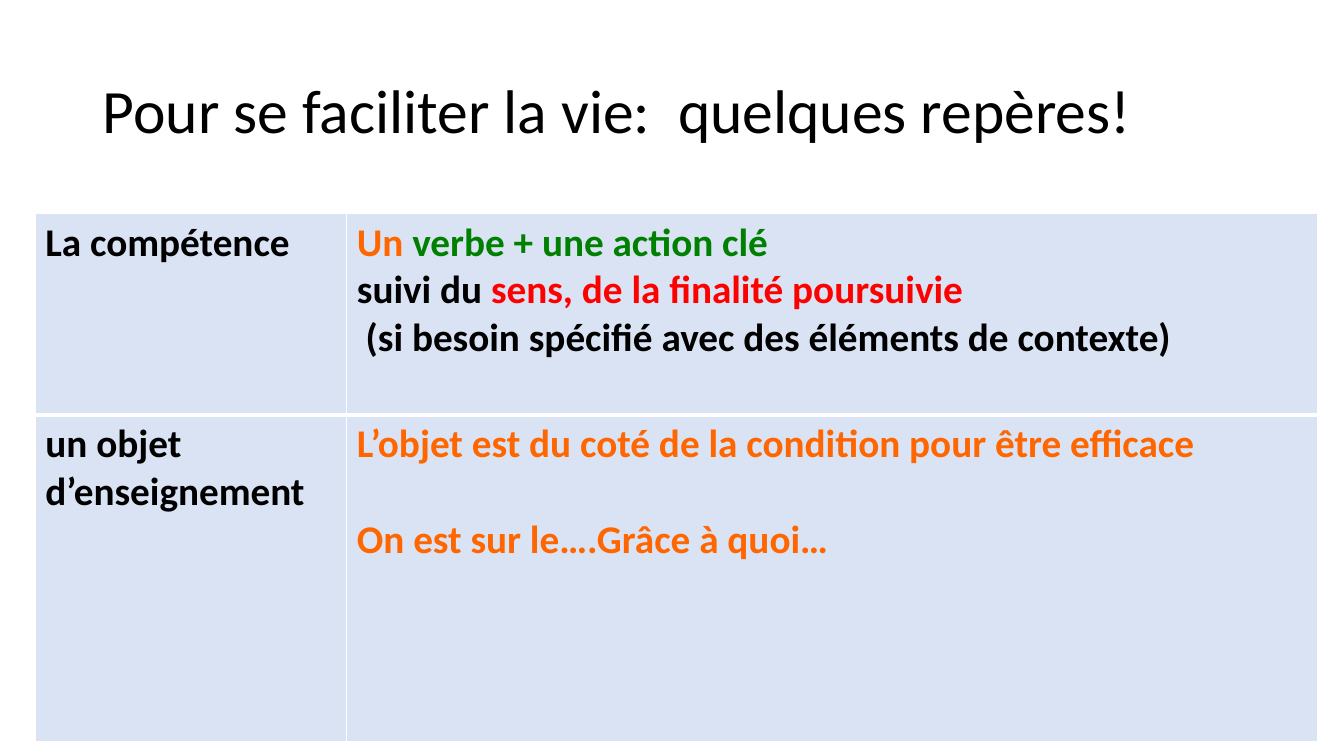
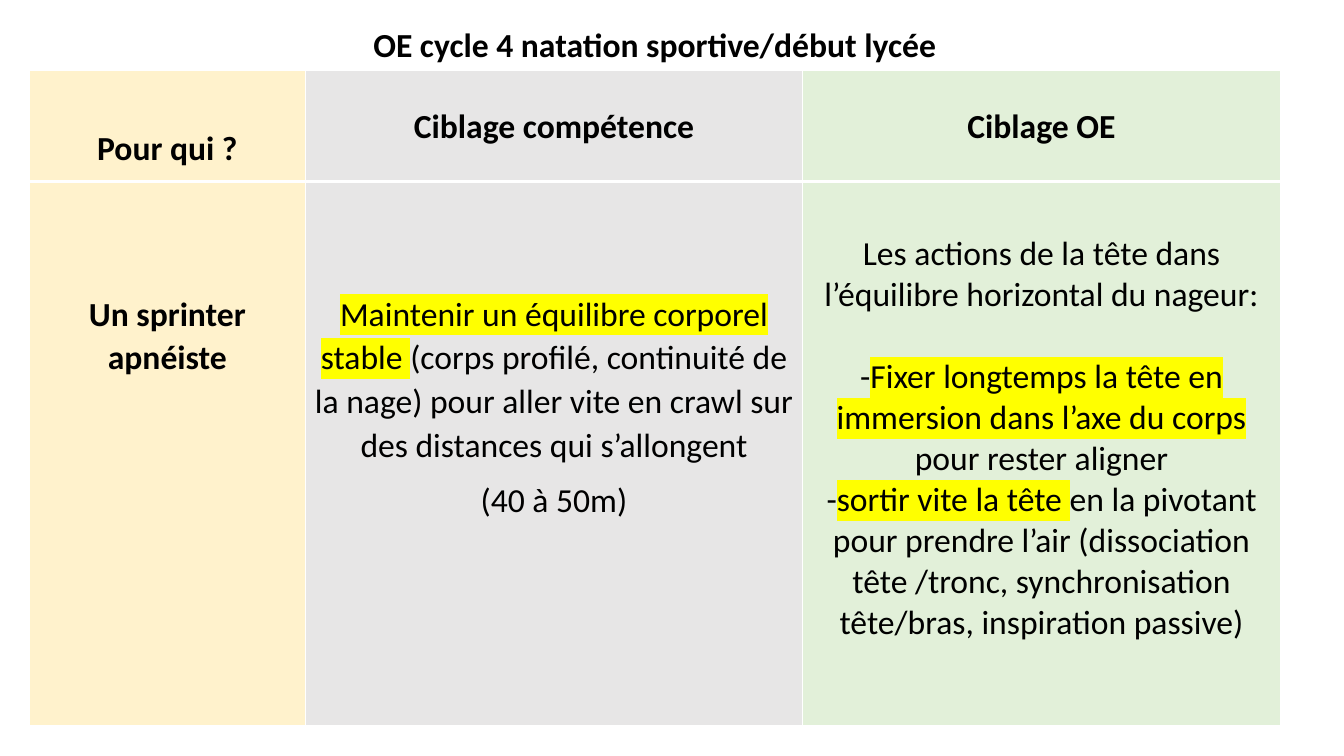
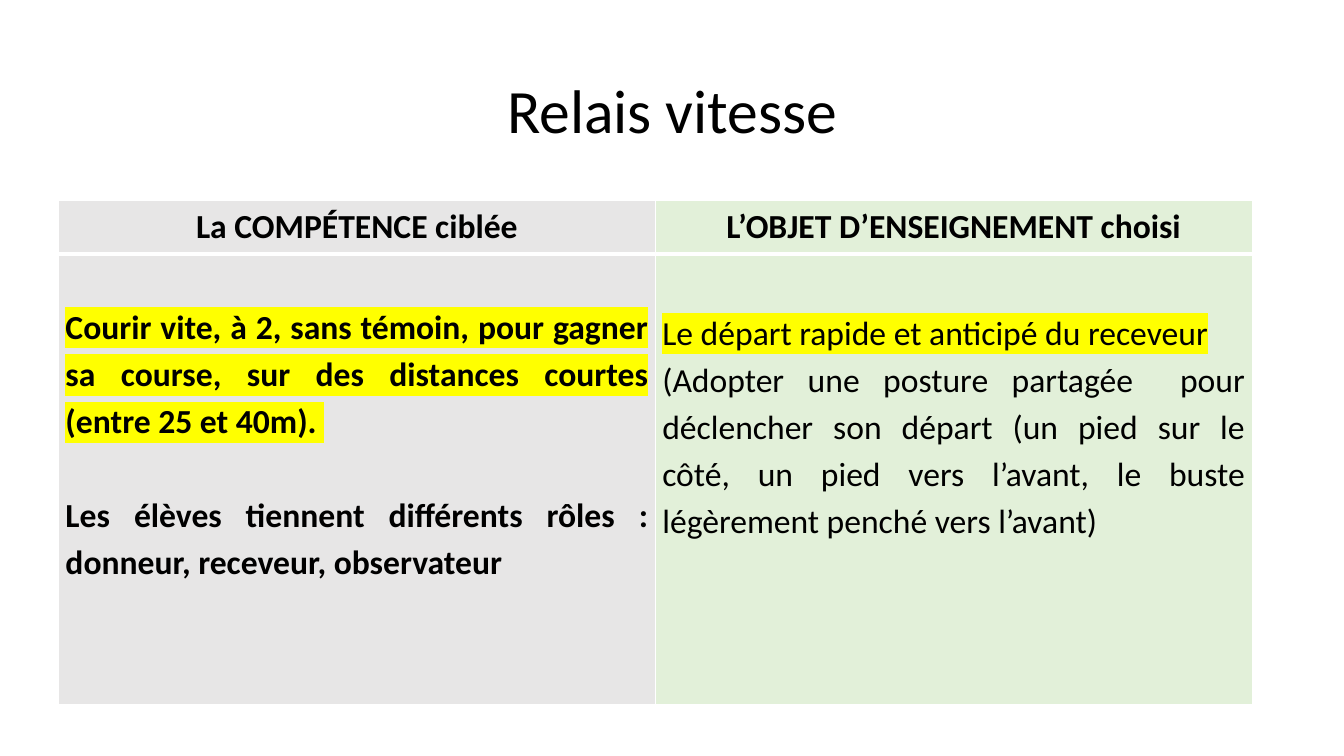
from dataclasses import dataclass, field

from lxml.etree import SubElement
from pptx import Presentation
from pptx.dml.color import RGBColor
from pptx.enum.text import MSO_ANCHOR, MSO_AUTO_SIZE, PP_ALIGN
from pptx.oxml.ns import qn
from pptx.oxml.xmlchemy import OxmlElement
from pptx.util import Inches, Pt

BLACK = RGBColor(0x00, 0x00, 0x00)
WHITE = RGBColor(0xFF, 0xFF, 0xFF)
ORANGE = RGBColor(0xFF, 0x66, 0x00)
GREEN = RGBColor(0x00, 0x80, 0x00)
RED = RGBColor(0xFF, 0x00, 0x00)
YELLOW = RGBColor(0xFF, 0xFF, 0x00)
PALE_BLUE = RGBColor(0xDA, 0xE3, 0xF3)
PALE_YELLOW = RGBColor(0xFF, 0xF2, 0xCC)
PALE_GREY = RGBColor(0xE7, 0xE6, 0xE6)
PALE_GREEN = RGBColor(0xE2, 0xF0, 0xD9)


@dataclass
class Run:
    text: str
    color: RGBColor = BLACK
    highlight: RGBColor = None


@dataclass
class Para:
    runs: list
    fmt: dict = field(default_factory=dict)


@dataclass
class Cell:
    fill: RGBColor
    paras: list
    top: float = 0
    anchor: MSO_ANCHOR = MSO_ANCHOR.TOP
    bold: bool = True


def set_all(target, values):
    for name, value in values.items():
        setattr(target, name, value)


def plain(text, **fmt):
    return Para([Run(text)], fmt)


class Deck:
    font = "Calibri"

    def __init__(self):
        self.prs = Presentation()
        set_all(self.prs, {"slide_width": Inches(13.33), "slide_height": Inches(7.5)})
        self.s = None

    def add_slide(self, layout):
        self.s = self.prs.slides.add_slide(self.prs.slide_layouts.get_by_name(layout))

    def add_run(self, p, run, size, bold):
        r = p.add_run()
        r.text = run.text
        set_all(r.font, {"size": Pt(size), "bold": bold, "name": self.font})
        r.font.color.rgb = run.color
        if run.highlight is not None:
            highlight = OxmlElement("a:highlight")
            SubElement(highlight, qn("a:srgbClr"), val=str(run.highlight))
            r.font._element.find(qn("a:solidFill")).addnext(highlight)

    def add_paras(self, tf, paras, size, bold, fmt):
        for i, para in enumerate(paras):
            p = tf.paragraphs[0] if i == 0 else tf.add_paragraph()
            set_all(p, {**fmt, **para.fmt})
            for run in para.runs:
                self.add_run(p, run, size, bold)

    def title(self, text, alignment):
        self.add_slide("Title Only")
        sp = self.s.shapes.title
        set_all(sp, {"left": Inches(0.92), "top": Inches(0.4),
                     "width": Inches(11.5), "height": Inches(1.45)})
        tf = sp.text_frame
        set_all(tf, {"word_wrap": True, "auto_size": MSO_AUTO_SIZE.NONE,
                     "vertical_anchor": MSO_ANCHOR.MIDDLE})
        self.add_paras(tf, [plain(text)], 44, False,
                       {"alignment": alignment, "line_spacing": 0.9})

    def heading(self, text, left, top, width, height):
        sp = self.s.shapes.add_textbox(Inches(left), Inches(top), Inches(width), Inches(height))
        sp.text_frame.word_wrap = True
        self.add_paras(sp.text_frame, [plain(text)], 24, True, {"alignment": PP_ALIGN.CENTER})

    def borders(self, cell, weights):
        tc_pr = cell._tc.get_or_add_tcPr()
        for i, (side, weight) in enumerate(weights.items()):
            ln = OxmlElement(f"a:ln{side}")
            ln.set("w", str(Pt(weight)))
            SubElement(SubElement(ln, qn("a:solidFill")), qn("a:srgbClr"), val=str(WHITE))
            tc_pr.insert(i, ln)

    def table(self, left, top, widths, heights, rows, size, fmt, side=0.07):
        frame = self.s.shapes.add_table(len(heights), len(widths), Inches(left), Inches(top),
                                        Inches(sum(widths)), Inches(sum(heights)))
        table = frame.table
        set_all(table, {"first_row": False, "horz_banding": False})
        for column, width in zip(table.columns, widths):
            column.width = Inches(width)
        for i, (height, row) in enumerate(zip(heights, rows)):
            table.rows[i].height = Inches(height)
            for j, content in enumerate(row):
                cell = table.cell(i, j)
                set_all(cell, {"margin_left": Inches(side), "margin_right": Inches(side),
                               "margin_top": Inches(content.top), "margin_bottom": 0,
                               "vertical_anchor": content.anchor})
                cell.fill.solid()
                cell.fill.fore_color.rgb = content.fill
                self.borders(cell, {"L": 1, "R": 1, "T": 3 if i == 1 else 1,
                                    "B": 3 if i == 0 else 1})
                self.add_paras(cell.text_frame, content.paras, size, content.bold, fmt)


def landmarks(deck):
    deck.title("Pour se faciliter la vie:  quelques repères!", PP_ALIGN.LEFT)
    skill = [
        Para([Run("Un ", ORANGE), Run("verbe + une action clé", GREEN)]),
        Para([Run("suivi du "), Run("sens, de la finalité poursuivie", RED)]),
        plain(" (si besoin spécifié avec des éléments de contexte)"),
    ]
    target = [
        Para([Run("L’objet est du coté de la condition pour être efficace", ORANGE)]),
        Para([Run("On est sur le….Grâce à quoi…", ORANGE)], {"space_before": Pt(34)}),
    ]
    rows = [
        [Cell(PALE_BLUE, [plain("La compétence")], 0.05), Cell(PALE_BLUE, skill, 0.05)],
        [Cell(PALE_BLUE, [plain("un objet d’enseignement")], 0.05),
         Cell(PALE_BLUE, target, 0.05)],
    ]
    deck.table(0.35, 2.12, [3.09, 9.63], [2, 3.24], rows, 28, {}, side=0.1)


def swimming(deck):
    deck.add_slide("Blank")
    skill = [
        Para([Run("Maintenir un équilibre corporel stable ", highlight=YELLOW),
              Run("(corps profilé, continuité de la nage) pour aller vite en crawl "
                  "sur des distances qui s’allongent")]),
        plain("(40 à 50m)"),
    ]
    tight = {"line_spacing": 1.0, "space_after": Pt(0)}
    actions = [
        plain("Les actions de la tête dans l’équilibre horizontal du nageur:", **tight),
        Para([Run("-"),
              Run("Fixer longtemps la tête en immersion dans l’axe du corps ", highlight=YELLOW),
              Run("pour rester aligner")], {**tight, "space_before": Pt(29.3)}),
        Para([Run("-"), Run("sortir vite la tête ", highlight=YELLOW),
              Run("en la pivotant pour prendre l’air (dissociation tête /tronc, "
                  "synchronisation tête/bras, inspiration passive)")], tight),
    ]
    rows = [
        [Cell(PALE_YELLOW, [plain("Pour qui ?")], 0.55),
         Cell(PALE_GREY, [plain("Ciblage compétence")], anchor=MSO_ANCHOR.MIDDLE),
         Cell(PALE_GREEN, [plain("Ciblage OE")], anchor=MSO_ANCHOR.MIDDLE)],
        [Cell(PALE_YELLOW, [plain("Un sprinter apnéiste")], 1.09),
         Cell(PALE_GREY, skill, 1.09, bold=False),
         Cell(PALE_GREEN, actions, 0.52, bold=False)],
    ]
    deck.table(0.29, 0.7, [2.74, 4.93, 4.74], [1.1, 5.4], rows, 24,
               {"alignment": PP_ALIGN.CENTER, "line_spacing": 1.07, "space_after": Pt(8)})
    deck.heading("OE cycle 4 natation sportive/début lycée", 3.26, 0.19, 6.47, 0.5)


def relay(deck):
    deck.title("Relais vitesse", PP_ALIGN.CENTER)
    centred = {"alignment": PP_ALIGN.CENTER}
    skill = [
        Para([Run("Courir vite, à 2, sans témoin, pour gagner sa course, "
                  "sur des distances courtes (entre 25 et 40m). ", highlight=YELLOW)]),
        plain("Les élèves tiennent différents rôles : donneur, receveur, observateur",
              space_before=Pt(33.7)),
    ]
    target = [
        Para([Run("Le départ rapide et anticipé du receveur", highlight=YELLOW)]),
        plain("(Adopter une posture partagée  pour déclencher son départ (un pied sur le côté, "
              "un pied vers l’avant, le buste légèrement penché vers l’avant)"),
    ]
    rows = [
        [Cell(PALE_GREY, [plain("La COMPÉTENCE ciblée", **centred)]),
         Cell(PALE_GREEN, [plain("L’OBJET D’ENSEIGNEMENT choisi", **centred)])],
        [Cell(PALE_GREY, skill, 0.47), Cell(PALE_GREEN, target, 0.53, bold=False)],
    ]
    deck.table(0.58, 1.99, [5.92, 5.92], [0.53, 4.47], rows, 24,
               {"alignment": PP_ALIGN.JUSTIFY, "line_spacing": 1.15})


def main():
    deck = Deck()
    for build in (landmarks, swimming, relay):
        build(deck)
    deck.prs.save("out.pptx")


if __name__ == "__main__":
    main()
